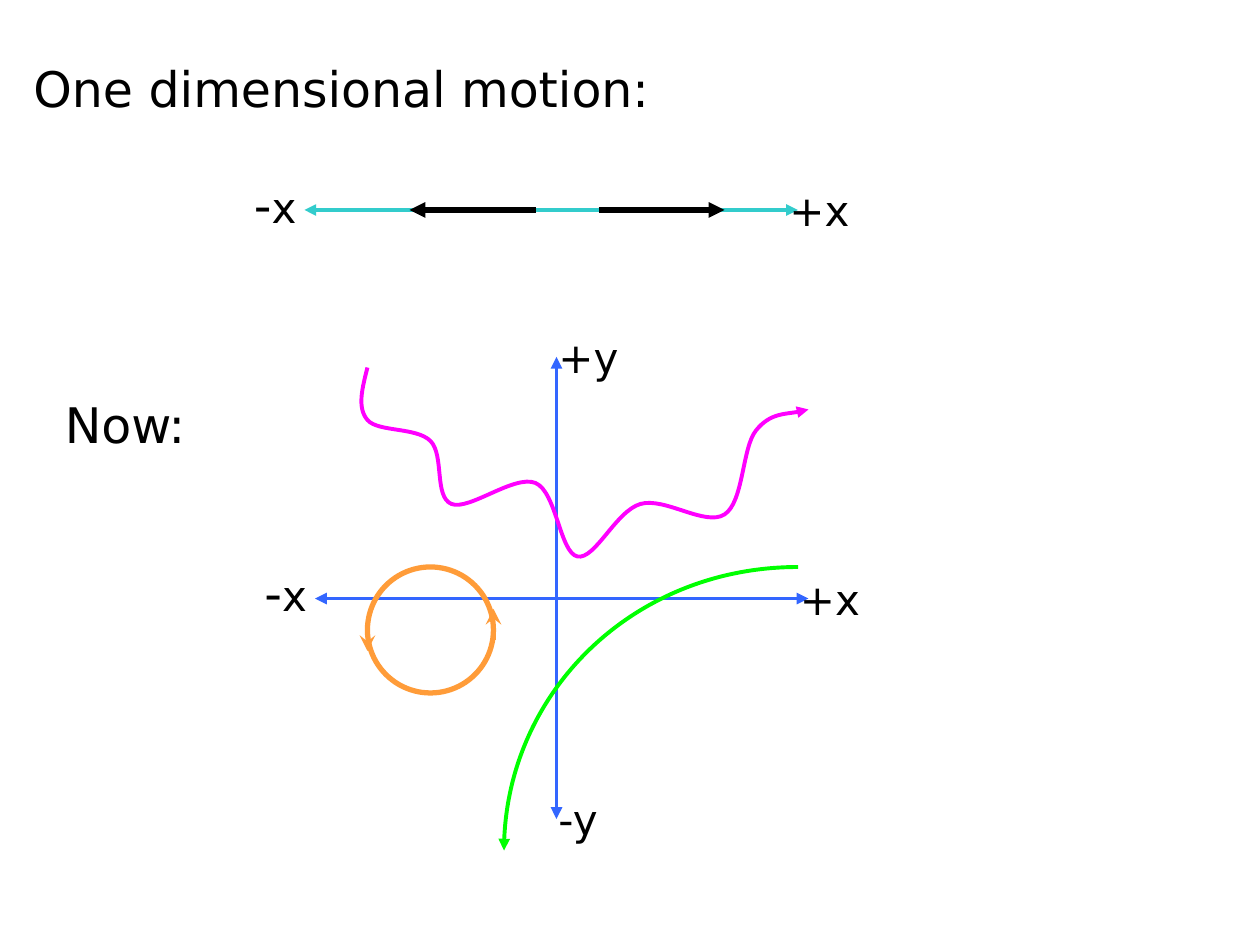
from lxml.etree import SubElement
from pptx import Presentation
from pptx.dml.color import RGBColor
from pptx.enum.shapes import MSO_CONNECTOR as Connector, MSO_SHAPE as Shape
from pptx.oxml.ns import qn
from pptx.util import Pt

FONT = "DejaVu Sans"
BLACK, TEAL, BLUE = "000000", "33CCCC", "3366FF"
MAGENTA, GREEN, ORANGE = "FF00FF", "00FF00", "FF9C39"
HEADING_SIZE, LABEL_SIZE = 28, 24
THIN, THICK = 2.25, 3

AXIS_LENGTH = 282
LINE_LEFT, LINE_Y = 174, 120
PLANE_LEFT, PLANE_Y = 180, 342
Y_AXIS_X, Y_AXIS_TOP, Y_AXIS_BOTTOM = 318, 204, 468
MOTION_CENTER, MOTION_GAP, MOTION_LENGTH = 324, 18, 72

WANDERING_START = (210, 210)
WANDERING_BEZIERS = [
    [(207, 222), (204, 233), (210, 240)],
    [(216, 247), (238, 244), (246, 252)],
    [(254, 260), (248, 284), (258, 288)],
    [(268, 292), (294, 271), (306, 276)],
    [(318, 281), (320, 316), (330, 318)],
    [(340, 320), (352, 292), (366, 288)],
    [(380, 284), (403, 301), (414, 294)],
    [(425, 287), (424, 256), (432, 246)],
    [(440, 236), (457, 236), (462, 234)],
]
ARC_START = (456, 324)
ARC_BEZIERS = [[(363, 324), (288, 397), (288, 486)]]


def color(hex_value):
    return RGBColor.from_string(hex_value)


def style_line(line, hex_value, width, head=None, tail=None):
    line.color.rgb = color(hex_value)
    line.width = Pt(width)
    outline = line._get_or_add_ln()
    for end, kind in (("a:headEnd", head), ("a:tailEnd", tail)):
        if kind:
            SubElement(outline, qn(end), type=kind)


def add_label(slide, left, top, width, height, *runs):
    frame = slide.shapes.add_textbox(Pt(left), Pt(top), Pt(width), Pt(height)).text_frame
    frame.word_wrap = True
    for text, size in runs:
        run = frame.paragraphs[0].add_run()
        run.text = text
        run.font.name = FONT
        run.font.size = Pt(size)
        run.font.color.rgb = color(BLACK)


def add_heading(slide, left, top, width, text):
    add_label(slide, left, top, width, 41, (text, HEADING_SIZE))


def add_arrow(slide, start, end, hex_value, width, head=None, tail="triangle"):
    arrow = slide.shapes.add_connector(Connector.STRAIGHT, *map(Pt, start + end))
    style_line(arrow.line, hex_value, width, head, tail)
    SubElement(arrow._element.spPr, qn("a:effectLst"))


def add_x_axis(slide, left, y, hex_value):
    right = left + AXIS_LENGTH
    add_arrow(slide, (left, y), (right, y), hex_value, THIN, head="triangle")
    add_label(slide, right - 12, y - 18, 54, 36, ("+x", LABEL_SIZE))
    add_label(slide, left - 36, y - 24, 54, 41, ("-", HEADING_SIZE), ("x", LABEL_SIZE))


def add_y_axis(slide, x, top, bottom, hex_value):
    add_arrow(slide, (x, bottom), (x, top), hex_value, THIN, head="triangle")
    for text, tip in (("-y", bottom), ("+y", top)):
        add_label(slide, x - 6, tip - 18, 54, 36, (text, LABEL_SIZE))


def add_motion_arrows(slide, center, y):
    for direction in (1, -1):
        start = center + direction * MOTION_GAP
        end = start + direction * MOTION_LENGTH
        add_arrow(slide, (start, y), (end, y), BLACK, THICK)


def add_curve(slide, start, beziers, hex_value):
    builder = slide.shapes.build_freeform(*start, scale=Pt(1))
    for bezier in beziers:
        builder.add_line_segments(bezier, close=False)
    curve = builder.convert_to_shape()

    segments = list(curve._element.iter(qn("a:lnTo")))
    outline = segments[0].getparent()
    for first in range(0, len(segments), 3):
        cubic = SubElement(outline, qn("a:cubicBezTo"))
        for segment in segments[first:first + 3]:
            cubic.append(segment[0])
            outline.remove(segment)

    curve.fill.background()
    curve.shadow.inherit = False
    style_line(curve.line, hex_value, THIN, tail="triangle")


def add_orbit(slide, left, top, size):
    orbit = slide.shapes.add_shape(Shape.OVAL, Pt(left), Pt(top), Pt(size), Pt(size))
    orbit.fill.background()
    orbit.shadow.inherit = False
    style_line(orbit.line, ORANGE, THICK)
    arrow_start = top + 42
    for x, arrow_tip in ((left, top + 48), (left + size, top + 24)):
        add_arrow(slide, (x, arrow_start), (x, arrow_tip), ORANGE, THICK, tail="stealth")


def main():
    deck = Presentation()
    deck.slide_width, deck.slide_height = Pt(720), Pt(540)
    slide = deck.slides.add_slide(deck.slide_layouts[6])

    add_heading(slide, 12, 30, 660, "One dimensional motion:")
    add_x_axis(slide, LINE_LEFT, LINE_Y, TEAL)

    add_heading(slide, 30, 222, 402, "Now:")
    add_x_axis(slide, PLANE_LEFT, PLANE_Y, BLUE)
    add_y_axis(slide, Y_AXIS_X, Y_AXIS_TOP, Y_AXIS_BOTTOM, BLUE)

    add_curve(slide, WANDERING_START, WANDERING_BEZIERS, MAGENTA)
    add_curve(slide, ARC_START, ARC_BEZIERS, GREEN)
    add_motion_arrows(slide, MOTION_CENTER, LINE_Y)
    add_orbit(slide, 210, 324, 72)

    deck.save("out.pptx")


if __name__ == "__main__":
    main()
